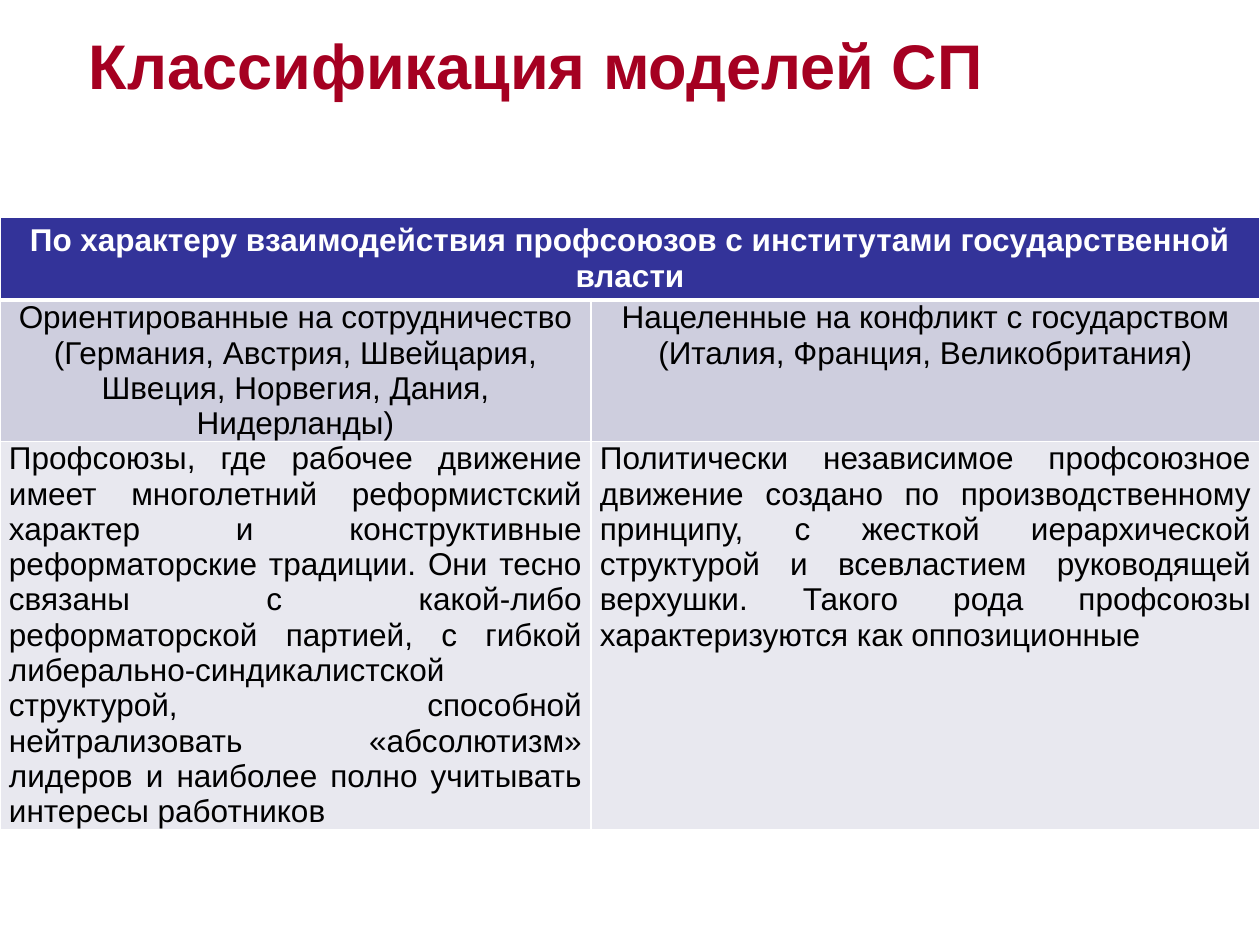
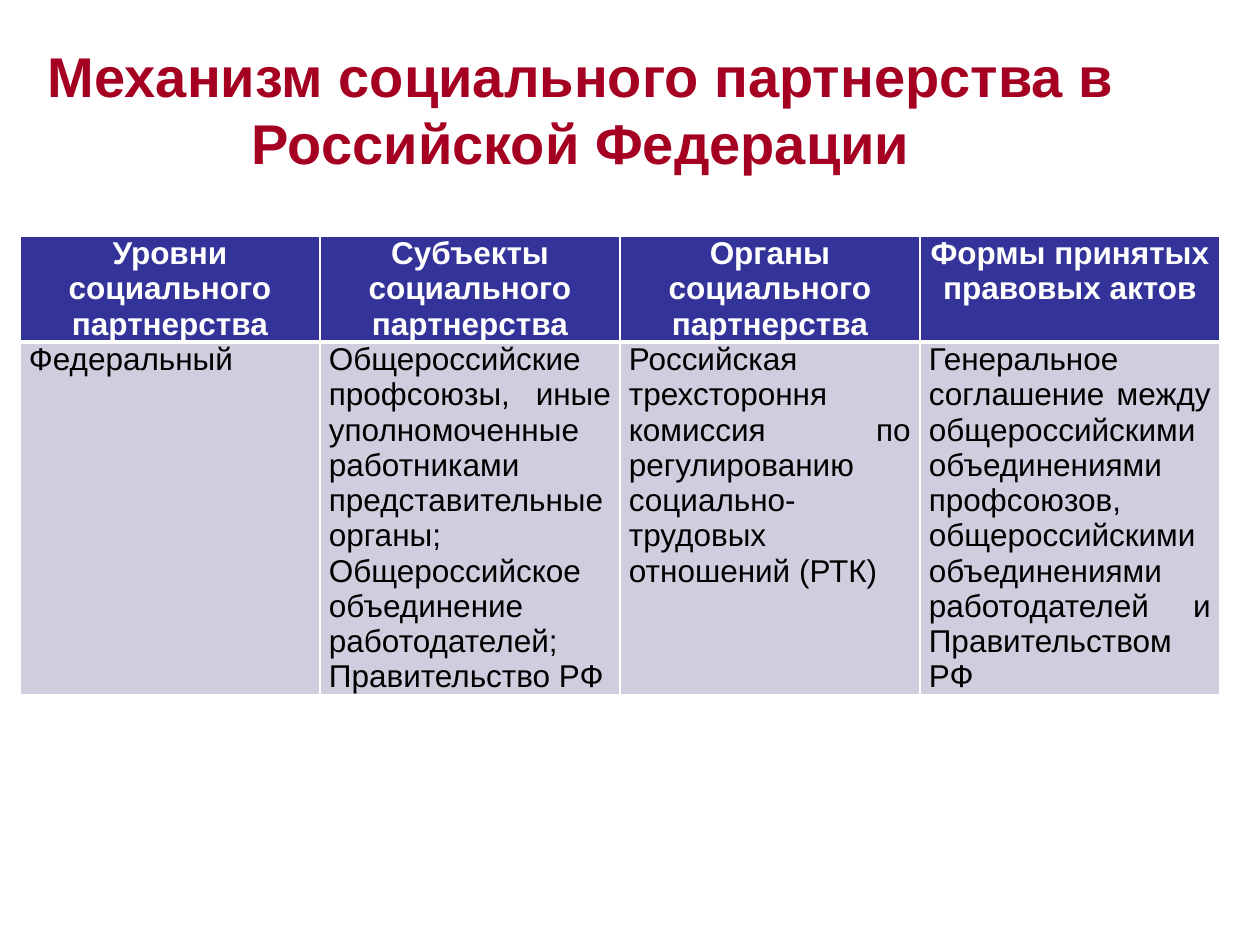
"""Build two slides on models and mechanisms of social partnership."""
from lxml import etree
from pptx import Presentation
from pptx.dml.color import RGBColor
from pptx.enum.text import MSO_ANCHOR, MSO_AUTO_SIZE, PP_ALIGN
from pptx.oxml.ns import qn
from pptx.util import Pt

PX = 914400 / 126
FONT = "Arial"
RED = RGBColor(0xA5, 0x00, 0x21)
NAVY = RGBColor(0x33, 0x33, 0x99)
LILAC = RGBColor(0xCE, 0xCE, 0xDE)
PALE = RGBColor(0xE8, 0xE8, 0xEF)
WHITE = RGBColor(0xFF, 0xFF, 0xFF)
BLACK = RGBColor(0x00, 0x00, 0x00)
LEFT, CENTER, JUSTIFY = PP_ALIGN.LEFT, PP_ALIGN.CENTER, PP_ALIGN.JUSTIFY
MIDDLE = MSO_ANCHOR.MIDDLE
NO_FIT = MSO_AUTO_SIZE.NONE
ROW_FILLS = [NAVY, LILAC, PALE]

SLIDES = [
    {
        "title": "Классификация моделей СП",
        "title_box": (49, 29, 974, 71),
        "title_size": 36,
        "table_at": (0, 217),
        "cols": [591, 669],
        "rows": [83, 141, 387],
        "cells": [
            [("По характеру взаимодействия профсоюзов с институтами государственной власти", CENTER)],
            [
                ("Ориентированные на сотрудничество\n"
                 "(Германия, Австрия, Швейцария, Швеция, Норвегия, Дания, Нидерланды)", CENTER),
                ("Нацеленные на конфликт с государством\n"
                 "(Италия, Франция, Великобритания)", CENTER),
            ],
            [
                ("Профсоюзы, где рабочее движение имеет многолетний реформистский характер и "
                 "конструктивные реформаторские традиции. Они тесно связаны с какой-либо "
                 "реформаторской партией, с гибкой либерально-синдикалистской структурой, "
                 "способной нейтрализовать «абсолютизм» лидеров и наиболее полно учитывать "
                 "интересы работников", JUSTIFY),
                ("Политически независимое профсоюзное движение создано по производственному "
                 "принципу, с жесткой иерархической структурой и всевластием руководящей "
                 "верхушки. Такого рода профсоюзы характеризуются как оппозиционные", JUSTIFY),
            ],
        ],
    },
    {
        "title": "Механизм социального партнерства в Российской Федерации",
        "title_box": (0, 49, 1162, 120),
        "title_size": 32,
        "table_at": (20, 236),
        "cols": [300] * 4,
        "rows": [106, 353],
        "cells": [
            [
                ("Уровни социального партнерства", CENTER),
                ("Субъекты социального партнерства", CENTER),
                ("Органы социального партнерства", CENTER),
                ("Формы принятых правовых актов", CENTER),
            ],
            [
                ("Федеральный", LEFT),
                ("Общероссийские профсоюзы, иные уполномоченные работниками представительные "
                 "органы; Общероссийское объединение работодателей; Правительство РФ", JUSTIFY),
                ("Российская трехстороння комиссия по регулированию социально-трудовых "
                 "отношений (РТК)", JUSTIFY),
                ("Генеральное соглашение между общероссийскими объединениями профсоюзов, "
                 "общероссийскими объединениями работодателей и Правительством РФ", JUSTIFY),
            ],
        ],
    },
]


def px(n):
    return round(n * PX)


def set_borders(cell, top, bottom):
    tc_pr = cell._tc.get_or_add_tcPr()
    for side, width in (("L", 1), ("R", 1), ("T", top), ("B", bottom)):
        ln = etree.SubElement(tc_pr, qn(f"a:ln{side}"), w=str(Pt(width)))
        fill = etree.SubElement(ln, qn("a:solidFill"))
        etree.SubElement(fill, qn("a:srgbClr"), val=str(WHITE))


prs = Presentation()
prs.slide_width, prs.slide_height = px(1260), px(945)

for data in SLIDES:
    s = prs.slides.add_slide(prs.slide_layouts[5])
    title = s.shapes.title
    title.left, title.top, title.width, title.height = map(px, data["title_box"])
    tf = title.text_frame
    tf.text = data["title"]
    tf.word_wrap = True
    tf.auto_size = NO_FIT
    tf.vertical_anchor = MIDDLE
    p = tf.paragraphs[0]
    p.alignment = CENTER
    font = p.runs[0].font
    font.name, font.size, font.bold = FONT, Pt(data["title_size"]), True
    font.color.rgb = RED

    cols, rows = data["cols"], data["rows"]
    x, y = data["table_at"]
    table = s.shapes.add_table(len(rows), len(cols), px(x), px(y),
                               px(sum(cols)), px(sum(rows))).table
    table.horz_banding = False
    for col, width in zip(table.columns, cols):
        col.width = px(width)
    for i, (height, texts) in enumerate(zip(rows, data["cells"])):
        table.rows[i].height = px(height)
        header = i == 0
        spanning = len(texts) < len(cols)
        if spanning:
            table.cell(i, 0).merge(table.cell(i, len(cols) - 1))
        for j in range(len(cols)):
            cell = table.cell(i, j)
            set_borders(cell, 3 if i == 1 else 1, 3 if header else 1)
            cell.fill.solid()
            cell.fill.fore_color.rgb = ROW_FILLS[i]
        for j, (text, align) in enumerate(texts):
            cell = table.cell(i, j)
            if not spanning:
                cell.margin_left = cell.margin_right = px(9)
                cell.margin_top = cell.margin_bottom = 0
            cell.text_frame.text = text
            for p in cell.text_frame.paragraphs:
                p.alignment = align
                font = p.runs[0].font
                font.name, font.size, font.bold = FONT, Pt(18), header
                font.color.rgb = WHITE if header else BLACK

prs.save("out.pptx")
